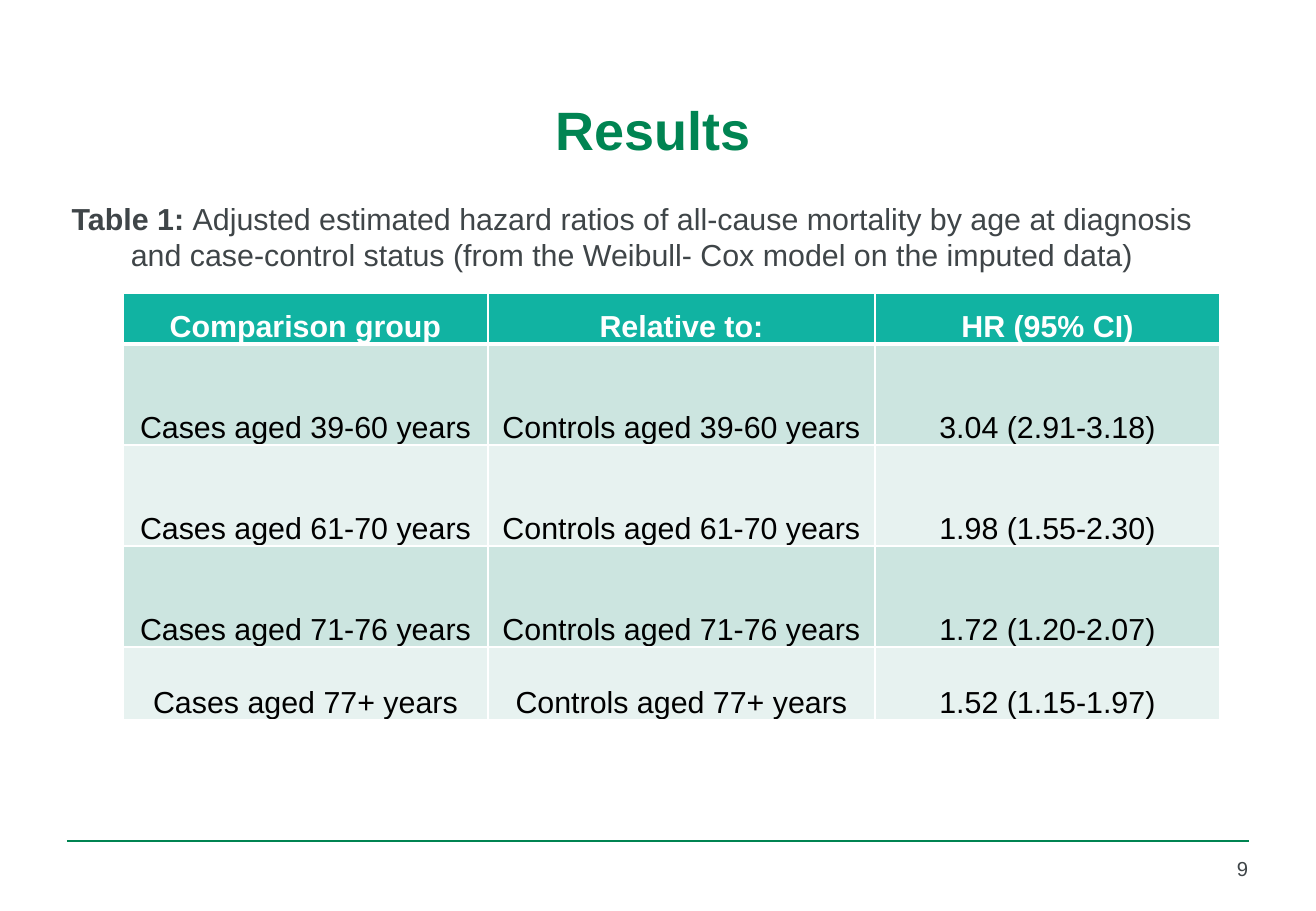
from dataclasses import dataclass

from lxml.etree import SubElement
from pptx import Presentation
from pptx.dml.color import RGBColor as Rgb
from pptx.enum.shapes import MSO_CONNECTOR as Connector
from pptx.enum.text import MSO_ANCHOR as Anchor, PP_ALIGN as Align
from pptx.oxml.ns import qn
from pptx.util import Pt

PX = 7526


@dataclass(frozen=True)
class Theme:
    """Colours and type sizes of the page."""
    font: str = "Arial"
    green: str = "008452"
    grey: str = "3F4548"
    white: str = "FFFFFF"
    black: str = "000000"
    header: str = "11B3A2"
    bands: tuple = ("CCE5E0", "E7F2F0")
    title: int = 32
    body: int = 18
    small: int = 12


THEME = Theme()
AGES = ("39-60", "61-70", "71-76", "77+")
RATIOS = ("3.04 (2.91-3.18)", "1.98 (1.55-2.30)", "1.72 (1.20-2.07)", "1.52 (1.15-1.97)")
ROWS = [("Comparison group", "Relative to:", "HR (95% CI)")] + [
    (f"Cases aged {age} years", f"Controls aged {age} years", ratio)
    for age, ratio in zip(AGES, RATIOS)
]
COLUMN_WIDTHS = (365, 387, 345)
ROW_HEIGHTS = (47, 101, 101, 101, 73)


def px(*lengths):
    """Turn pixel lengths into EMU."""
    return [length * PX for length in lengths]


def apply(target, values):
    """Set each named value as an attribute of the target."""
    for name, value in values.items():
        setattr(target, name, value)


def write(para, parts, size, colour, **layout):
    """Fill a paragraph with (text, bold) spans in one type style."""
    apply(para, layout)
    for text, bold in parts:
        span = para.add_run()
        span.text = text
        apply(span.font, {"name": THEME.font, "size": Pt(size), "bold": bold})
        span.font.color.rgb = Rgb.from_string(colour)


def add_title(page, text):
    """Place and format the title placeholder."""
    title = page.shapes.title
    apply(title, dict(zip(("left", "top", "width", "height"), px(57, 53, 1193, 152))))
    apply(title.text_frame, {"vertical_anchor": Anchor.MIDDLE, "word_wrap": True})
    write(title.text_frame.paragraphs[0], [(text, True)],
          THEME.title, THEME.green, alignment=Align.CENTER)


def add_text(page, place, lines, size, align, wrap):
    """Add a grey text box with one paragraph per line."""
    frame = page.shapes.add_textbox(*px(*place)).text_frame
    frame.word_wrap = wrap
    for index, parts in enumerate(lines):
        para = frame.add_paragraph() if index else frame.paragraphs[0]
        write(para, parts, size, THEME.grey, alignment=align)


def add_rule(page, left, right, y):
    """Draw the thin green rule above the footer."""
    rule = page.shapes.add_connector(Connector.STRAIGHT, *px(left, y, right, y))
    rule.line.color.rgb = Rgb.from_string(THEME.green)
    rule.line.width = Pt(1)
    SubElement(rule.element.spPr, qn("a:effectLst"))


def add_borders(cell, widths):
    """Give a cell white borders with the width in points for each side."""
    properties = cell._tc.get_or_add_tcPr()
    for side, width in widths.items():
        line = SubElement(properties, qn(f"a:ln{side}"), w=str(Pt(width)))
        fill = SubElement(line, qn("a:solidFill"))
        SubElement(fill, qn("a:srgbClr"), val=THEME.white)


def format_cell(cell, text, row):
    """Fill one table cell by the rule for its row."""
    is_header = row == 0
    apply(cell, {"vertical_anchor": Anchor.BOTTOM, "margin_left": 9 * PX,
                 "margin_right": 9 * PX, "margin_top": 0, "margin_bottom": 0})
    add_borders(cell, {"L": 1, "R": 1, "T": 3 if row == 1 else 1,
                       "B": 3 if is_header else 1})
    cell.fill.solid()
    fill = THEME.header if is_header else THEME.bands[(row - 1) % 2]
    cell.fill.fore_color.rgb = Rgb.from_string(fill)
    write(cell.text_frame.paragraphs[0], [(text, is_header)], THEME.body,
          THEME.white if is_header else THEME.black,
          alignment=Align.CENTER, line_spacing=1.5)


def add_ratio_table(page, left, top):
    """Add the table of hazard ratios."""
    place = px(left, top, sum(COLUMN_WIDTHS), sum(ROW_HEIGHTS))
    table = page.shapes.add_table(len(ROWS), len(COLUMN_WIDTHS), *place).table
    for column, width in zip(table.columns, px(*COLUMN_WIDTHS)):
        column.width = width
    for row, height in zip(table.rows, px(*ROW_HEIGHTS)):
        row.height = height
    for row, texts in enumerate(ROWS):
        for column, text in enumerate(texts):
            format_cell(table.cell(row, column), text, row)


def main():
    """Build the results page and save the deck."""
    deck = Presentation()
    apply(deck, dict(zip(("slide_width", "slide_height"), px(1316, 911))))
    page = deck.slides.add_slide(deck.slide_layouts[5])
    add_rule(page, 67, 1249, 841)
    add_title(page, "Results")
    add_ratio_table(page, 123, 293)
    add_text(page, (1166, 850, 94, 45), [[("9", False)]], THEME.small, Align.RIGHT, True)
    caption = [
        [("Table 1: ", True),
         ("Adjusted estimated hazard ratios of all-cause mortality by age at diagnosis", False)],
        [("and case-control status (from the Weibull- Cox model on the imputed data)", False)],
    ]
    add_text(page, (50, 194, 1164, 123), caption, THEME.body, Align.CENTER, False)
    deck.save("out.pptx")


if __name__ == "__main__":
    main()
